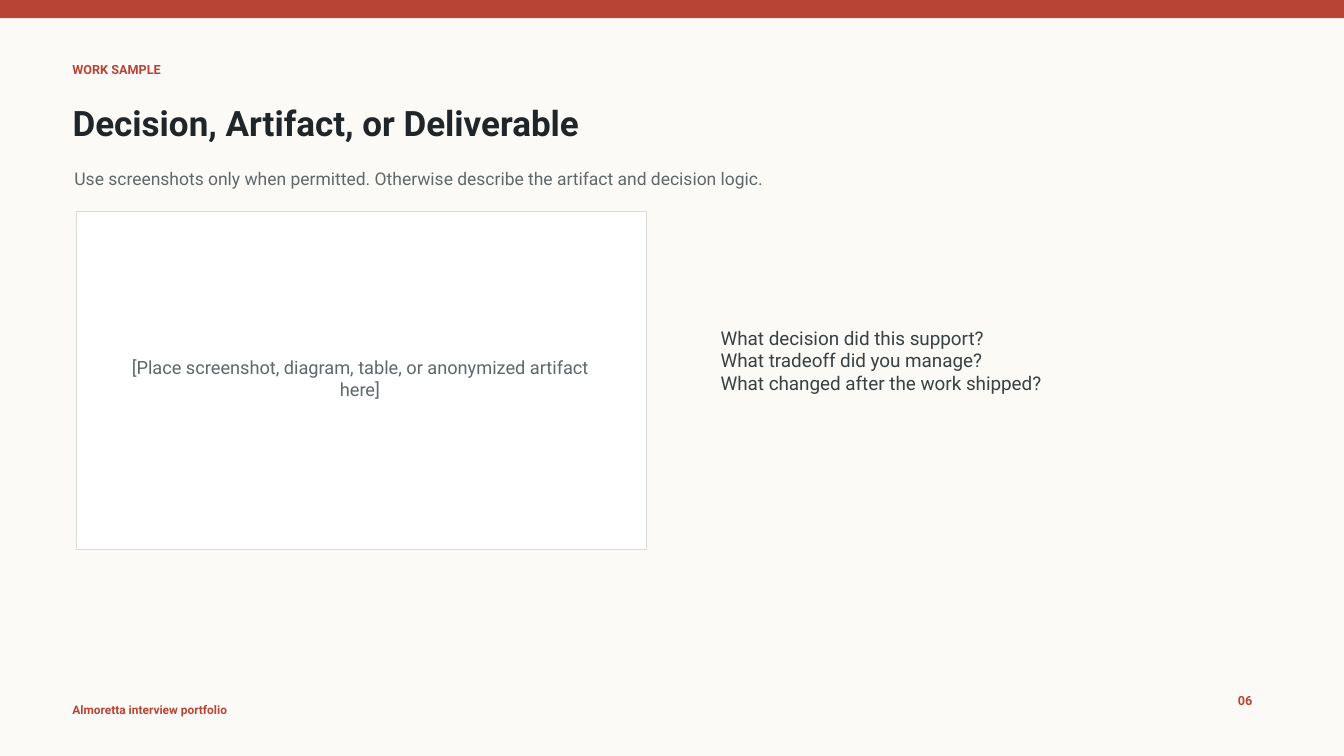
import pptx
import pptx.util
import pptx.dml.color
import pptx.enum.shapes
import pptx.enum.text

Inches = pptx.util.Inches
RGBColor = pptx.dml.color.RGBColor
ALIGN = pptx.enum.text.PP_ALIGN

PAPER = RGBColor(0xFB, 0xFA, 0xF6)
WHITE = RGBColor(0xFF, 0xFF, 0xFF)
RED = RGBColor(0xB7, 0x44, 0x34)
INK = RGBColor(0x1F, 0x25, 0x28)
BODY = RGBColor(0x38, 0x41, 0x44)
GRAY = RGBColor(0x5E, 0x68, 0x6B)
EDGE = RGBColor(0xD8, 0xDD, 0xD7)


class Page:
    def __init__(self, deck, font, paper):
        self.font = font
        self.slide = deck.slides.add_slide(deck.slide_layouts[5])
        fill = self.slide.background.fill
        fill.solid()
        fill.fore_color.rgb = paper

    def letter(self, shape, lines, size, color, bold=False, align=ALIGN.LEFT):
        frame = shape.text_frame
        setup = {
            "text": "\n".join(lines),
            "word_wrap": True,
            "auto_size": pptx.enum.text.MSO_AUTO_SIZE.NONE,
            "vertical_anchor": pptx.enum.text.MSO_ANCHOR.MIDDLE,
        }
        for name, value in setup.items():
            setattr(frame, name, value)
        style = {"name": self.font, "size": pptx.util.Pt(size), "bold": bold}
        for para in frame.paragraphs:
            para.alignment = align
            for run in para.runs:
                for name, value in style.items():
                    setattr(run.font, name, value)
                run.font.color.rgb = color

    def title(self, box, line, size, color):
        shape = self.slide.shapes.title
        for name, value in zip(("left", "top", "width", "height"), box):
            setattr(shape, name, Inches(value))
        self.letter(shape, [line], size, color, bold=True)

    def text(self, box, lines, size, color, **style):
        shape = self.slide.shapes.add_textbox(*map(Inches, box))
        self.letter(shape, lines, size, color, **style)

    def rect(self, box, fill, edge=None):
        kind = pptx.enum.shapes.MSO_SHAPE.RECTANGLE
        shape = self.slide.shapes.add_shape(kind, *map(Inches, box))
        shape.shadow.inherit = False
        shape.fill.solid()
        shape.fill.fore_color.rgb = fill
        if edge is None:
            shape.line.fill.background()
        else:
            shape.line.color.rgb = edge
            shape.line.width = pptx.util.Pt(1)


def main():
    deck = pptx.Presentation()
    deck.slide_width = Inches(13.33)
    deck.slide_height = Inches(7.5)
    page = Page(deck, "Roboto", PAPER)

    page.rect((0, 0, 13.33, 0.18), RED)
    page.text((0.62, 6.94, 3, 0.2), ["Almoretta interview portfolio"], 8.5, RED, bold=True)
    page.text((12.18, 6.82, 0.5, 0.25), ["06"], 9, RED, bold=True)
    page.text((0.62, 0.58, 4.8, 0.22), ["WORK SAMPLE"], 9, RED, bold=True)
    page.title((0.62, 0.94, 9.8, 0.55), "Decision, Artifact, or Deliverable", 25, INK)
    page.text(
        (0.64, 1.56, 10.8, 0.42),
        ["Use screenshots only when permitted. Otherwise describe the artifact and decision logic."],
        12.5, GRAY,
    )
    page.rect((0.76, 2.1, 5.65, 3.35), WHITE, EDGE)
    page.text(
        (1.12, 3.55, 4.9, 0.4),
        ["[Place screenshot, diagram, table, or anonymized artifact here]"],
        13, GRAY, align=ALIGN.CENTER,
    )
    page.text(
        (7.05, 2.4, 4.4, 2.35),
        [
            "What decision did this support?",
            "What tradeoff did you manage?",
            "What changed after the work shipped?",
        ],
        13.5, BODY,
    )
    deck.save("out.pptx")


if __name__ == "__main__":
    main()
